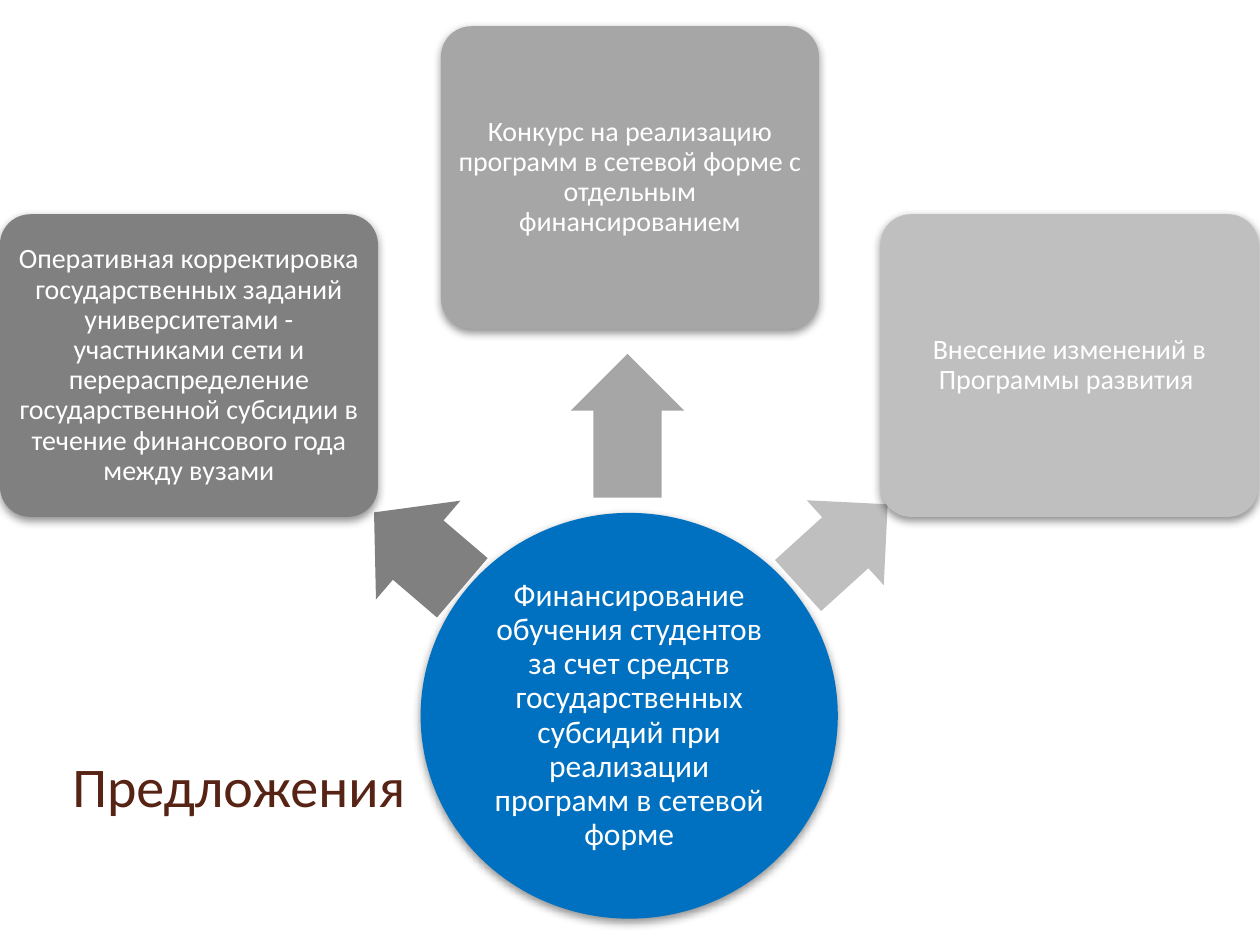
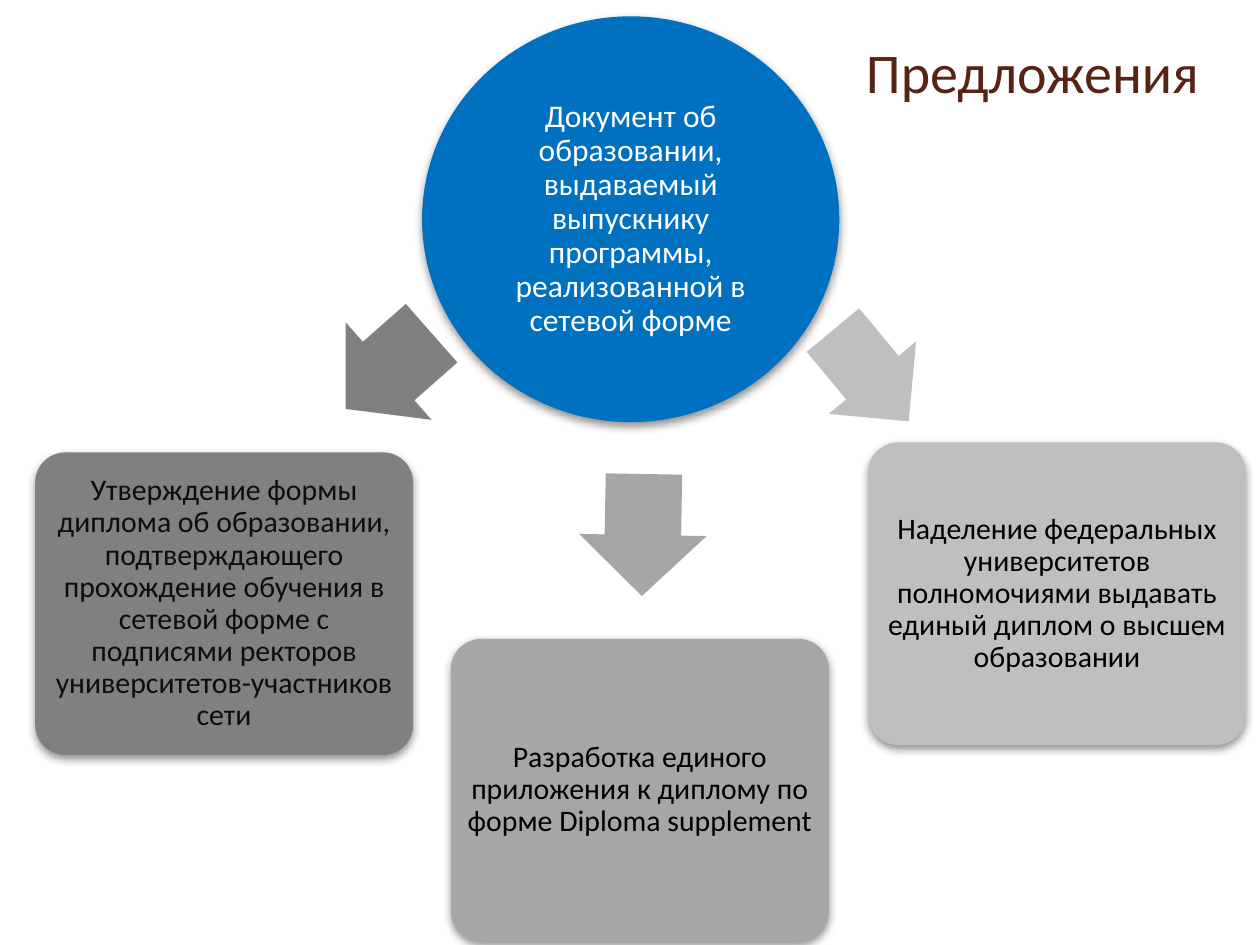
"""Build two slides of proposals, each with a hub and three boxes."""
import lxml.etree
import pptx
import pptx.dml.color
import pptx.enum.shapes
import pptx.enum.text
import pptx.oxml.ns
import pptx.util

Cm = pptx.util.Cm
SHAPES = pptx.enum.shapes.MSO_SHAPE


def color(value):
    """Turn a hex string into a colour."""
    return pptx.dml.color.RGBColor.from_string(value)


class Deck:
    """Hold the shared style and the current slide."""

    FONT = "Calibri"
    TITLE_COLOR = "572314"
    HUB_COLOR = "0070C0"
    BOX_COLORS = ("808080", "A6A6A6", "BFBFBF")
    WHITE = "FFFFFF"
    HUB_SIZE = (8.41, 8.18)
    BOX_SIZE = (7.62, 6.1)
    TITLE_SIZE = (8.61, 2.21)

    def __init__(self):
        """Start an empty presentation."""
        self.presentation = pptx.Presentation()
        self.presentation.slide_width = Cm(25.4)
        self.presentation.slide_height = Cm(19.05)
        self.slide = None

    def add_slide(self):
        """Add a slide with only a title."""
        layout = self.presentation.slide_layouts[5]
        self.slide = self.presentation.slides.add_slide(layout)

    def set_text(self, shape, text, size, text_color, margin):
        """Put centred text into a shape."""
        frame = shape.text_frame
        frame.text = text
        frame.word_wrap = True
        frame.auto_size = pptx.enum.text.MSO_AUTO_SIZE.NONE
        frame.vertical_anchor = pptx.enum.text.MSO_ANCHOR.MIDDLE
        frame.margin_left = frame.margin_right = Cm(margin)
        frame.margin_top = frame.margin_bottom = Cm(margin)
        paragraph = frame.paragraphs[0]
        paragraph.alignment = pptx.enum.text.PP_ALIGN.CENTER
        paragraph.line_spacing = 0.9
        font = paragraph.runs[0].font
        font.name = self.FONT
        font.size = pptx.util.Pt(size)
        font.color.rgb = color(text_color)

    def title(self, text, left, top):
        """Place the slide title."""
        shape = self.slide.shapes.title
        width, height = self.TITLE_SIZE
        shape.left, shape.top = Cm(left), Cm(top)
        shape.width, shape.height = Cm(width), Cm(height)
        self.set_text(shape, text, 32, self.TITLE_COLOR, 0.2)
        shape.text_frame.paragraphs[0].line_spacing = 1.0

    def shape(self, kind, left, top, width, height, fill):
        """Add a filled shape without outline or shadow."""
        shape = self.slide.shapes.add_shape(
            kind, Cm(left), Cm(top), Cm(width), Cm(height))
        shape.shadow.inherit = False
        shape.fill.solid()
        shape.fill.fore_color.rgb = color(fill)
        shape.line.fill.background()
        return shape

    def drop_shadow(self, shape):
        """Give a shape a soft shadow below it."""
        qn = pptx.oxml.ns.qn
        effects = shape._element.spPr.find(qn("a:effectLst"))
        shadow = lxml.etree.SubElement(
            effects, qn("a:outerShdw"), blurRad=str(pptx.util.Pt(5)),
            dist=str(pptx.util.Pt(2)), dir="5400000", rotWithShape="0")
        tint = lxml.etree.SubElement(shadow, qn("a:srgbClr"), val="000000")
        lxml.etree.SubElement(tint, qn("a:alpha"), val="43000")

    def hub(self, text, left, top):
        """Add the central circle."""
        shape = self.shape(SHAPES.OVAL, left, top, *self.HUB_SIZE, self.HUB_COLOR)
        self.drop_shadow(shape)
        self.set_text(shape, text, 18, self.WHITE, 0.03)

    def arrow(self, kind, place, rotation, fill):
        """Add a rotated block arrow."""
        shape = self.shape(kind, *place, fill)
        shape.adjustments[0] = 0.6
        shape.adjustments[1] = 0.5
        shape.rotation = rotation

    def box(self, text, place, fill, size, text_color, margin):
        """Add a rounded box with a proposal."""
        shape = self.shape(SHAPES.ROUNDED_RECTANGLE, *place, *self.BOX_SIZE, fill)
        shape.adjustments[0] = 0.1
        self.drop_shadow(shape)
        self.set_text(shape, text, size, text_color, margin)

    def proposals(self, size, margin, items):
        """Add the arrows and boxes around the hub."""
        for fill, item in zip(self.BOX_COLORS, items):
            kind, arrow_place, rotation, box_place, text_color, text = item
            self.arrow(kind, arrow_place, rotation, fill)
            self.box(text, box_place, fill, size, text_color, margin)


def main():
    """Build and save the slides."""
    deck = Deck()
    left_arrow, right_arrow = SHAPES.LEFT_ARROW, SHAPES.RIGHT_ARROW

    deck.add_slide()
    deck.title("Предложения", 0.51, 14.73)
    deck.hub("Финансирование обучения студентов за счет средств государственных "
             "субсидий при реализации программ в сетевой форме", 8.48, 10.34)
    deck.proposals(16, 0.08, [
        (left_arrow, (7.26, 9.78, 2.34, 2.62), 40.5, (0, 4.32), deck.WHITE,
         "Оперативная корректировка государственных заданий университетами - "
         "участниками сети и перераспределение государственной субсидии в "
         "течение финансового года между вузами"),
        (left_arrow, (11.2, 7.44, 2.9, 2.29), 90, (8.89, 0.53), deck.WHITE,
         "Конкурс на реализацию программ в сетевой форме с отдельным "
         "финансированием"),
        (left_arrow, (15.77, 9.83, 2.44, 2.31), 137.8, (17.75, 4.32), deck.WHITE,
         "Внесение изменений в Программы развития "),
    ])

    deck.add_slide()
    deck.title("Предложения", 16.51, 0.33)
    deck.hub("Документ об образовании, выдаваемый выпускнику программы, "
             "реализованной в сетевой форме", 8.51, 0.33)
    deck.proposals(17, 0.1, [
        (left_arrow, (6.68, 6.17, 2.31, 2.62), 318.6, (0.71, 9.12), "0D0D0D",
         "Утверждение формы диплома об образовании, подтверждающего "
         "прохождение обучения в сетевой форме с подписями ректоров "
         "университетов-участников сети"),
        (left_arrow, (11.73, 9.5, 2.46, 2.57), 271, (9.09, 12.88), "000000",
         "Разработка единого приложения к диплому по форме Diploma supplement"),
        (right_arrow, (16.36, 6.43, 2.39, 2.29), 50.3, (17.5, 8.92), "000000",
         "Наделение федеральных университетов полномочиями выдавать единый "
         "диплом о высшем образовании"),
    ])

    deck.presentation.save("out.pptx")


if __name__ == "__main__":
    main()
